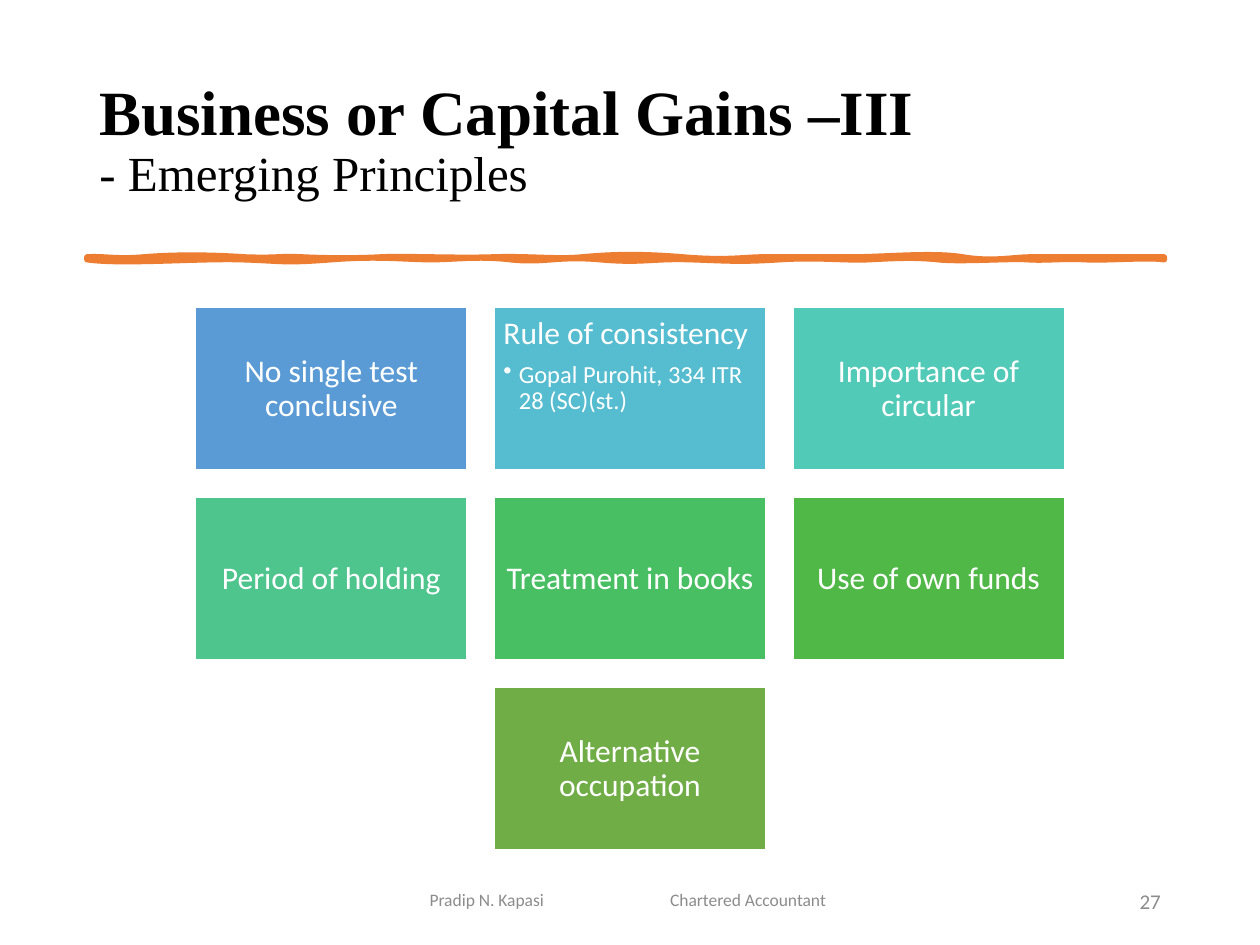
import pptx
import pptx.util
import pptx.dml.color
import pptx.enum.shapes
import pptx.enum.text
import pptx.oxml
import lxml.etree

Cm = pptx.util.Cm
Pt = pptx.util.Pt
RGB = pptx.dml.color.RGBColor
ALIGN = pptx.enum.text.PP_ALIGN
ANCHOR = pptx.enum.text.MSO_ANCHOR

BLACK = RGB(0x00, 0x00, 0x00)
WHITE = RGB(0xFF, 0xFF, 0xFF)
GREY = RGB(0x8C, 0x8C, 0x8C)
ORANGE = RGB(0xED, 0x7D, 0x31)
BLUE = RGB(0x5B, 0x9B, 0xD5)
CYAN = RGB(0x56, 0xBC, 0xD0)
TEAL = RGB(0x52, 0xCA, 0xB8)
MINT = RGB(0x4D, 0xC5, 0x8D)
JADE = RGB(0x49, 0xBF, 0x64)
LEAF = RGB(0x50, 0xB8, 0x46)
OLIVE = RGB(0x70, 0xAD, 0x47)

CARDS = [
    (0, 0, BLUE, "No single test conclusive", ""),
    (1, 0, CYAN, "Rule of consistency", "Gopal Purohit, 334 ITR 28 (SC)(st.)"),
    (2, 0, TEAL, "Importance of circular", ""),
    (0, 1, MINT, "Period of holding", ""),
    (1, 1, JADE, "Treatment in books", ""),
    (2, 1, LEAF, "Use of own funds", ""),
    (1, 2, OLIVE, "Alternative occupation", ""),
]

LEFT, TOP, BASE = 69, 204, 206
UPPER = [
    (82, 203, 92, 206, 114), (137, 202, 166, 202, 194),
    (222, 205, 220, 203, 240), (260, 205, 284, 205, 302),
    (320, 203, 362, 205, 391), (420, 203, 442, 206, 462),
    (483, 202, 506, 201, 542), (577, 207, 591, 204, 605),
    (618, 204, 650, 204, 676), (701, 204, 741, 200, 764),
    (788, 208, 804, 204, 818), (832, 204, 878, 204, 924),
]
LOWER = [
    (911, 204, 877, 207, 861), (845, 205, 829, 207, 815),
    (802, 205, 762, 208, 744), (726, 204, 709, 205, 690),
    (672, 207, 650, 204, 619), (588, 208, 578, 207, 548),
    (517, 205, 510, 209, 476), (442, 203, 432, 209, 405),
    (378, 203, 362, 206, 342), (322, 206, 301, 203, 263),
    (224, 209, 225, 207, 191), (157, 205, 96, 210, 69),
]


def add_tag(parent, tag, **attrs):
    """Append a drawing element to a parent element."""
    return lxml.etree.SubElement(parent, pptx.oxml.ns.qn(tag), attrs)


def add_run(para, text, size, color, font="Calibri", bold=False):
    """Append one formatted run to a paragraph."""
    run = para.add_run()
    run.text = text
    run.font.size = Pt(size)
    run.font.name = font
    run.font.bold = bold
    run.font.color.rgb = color


def set_title(slide):
    """Place the title and write its two lines."""
    title = slide.shapes.title
    title.left, title.top = Cm(1.75), Cm(1.02)
    title.width, title.height = Cm(21.89), Cm(3.68)
    frame = title.text_frame
    frame.vertical_anchor = ANCHOR.MIDDLE
    para = frame.paragraphs[0]
    para.alignment = ALIGN.LEFT
    para.line_spacing = 0.9
    add_run(para, "Business or Capital Gains –III", 36, BLACK,
            "Times New Roman", True)
    para.add_line_break()
    add_run(para, "- Emerging Principles", 28, BLACK, "Times New Roman")


def to_emu(num):
    """Turn hundredths of an inch into a length."""
    return Cm(num * 0.0254)


def bend(line, curve, base):
    """Replace a straight segment by a curve that ends on the base height."""
    ax, ay, bx, by, end = curve
    cubic = lxml.etree.Element(pptx.oxml.ns.qn("a:cubicBezTo"))
    for x, y in ((ax, ay), (bx, by), (end, base)):
        add_tag(cubic, "a:pt", x=str(to_emu(x - LEFT)), y=str(to_emu(y - TOP)))
    line.getparent().replace(line, cubic)


def add_stroke(slide):
    """Draw the wavy brush line below the title."""
    edges = [(curve, TOP) for curve in UPPER]
    edges += [(curve, BASE) for curve in LOWER]
    ends = [(to_emu(curve[-1]), to_emu(base)) for curve, base in edges]
    turn = len(UPPER)
    ends.insert(turn, (ends[turn - 1][0], to_emu(BASE)))
    pen = slide.shapes.build_freeform(to_emu(LEFT), to_emu(TOP))
    pen.add_line_segments(ends, close=True)
    stroke = pen.convert_to_shape()
    lines = list(stroke._element.iter(pptx.oxml.ns.qn("a:lnTo")))
    del lines[turn]
    for line, (curve, base) in zip(lines, edges):
        bend(line, curve, base)
    stroke.shadow.inherit = False
    stroke.fill.solid()
    stroke.fill.fore_color.rgb = ORANGE
    stroke.line.color.rgb = ORANGE
    stroke.line.width = Pt(3.25)
    add_tag(stroke.line._ln, "a:round")


def add_card(slide, col, row, color, head, note):
    """Add one card of the grid, with an optional bulleted note."""
    card = slide.shapes.add_shape(
        pptx.enum.shapes.MSO_SHAPE.RECTANGLE,
        Cm(3.94 + 6.02 * col), Cm(6.2 + 3.83 * row), Cm(5.48), Cm(3.28))
    card.shadow.inherit = False
    card.fill.solid()
    card.fill.fore_color.rgb = color
    card.line.color.rgb = WHITE
    card.line.width = Pt(1)
    frame = card.text_frame
    frame.word_wrap = True
    frame.margin_left = frame.margin_right = Cm(0.19)
    frame.margin_top = frame.margin_bottom = Cm(0.19)
    frame.vertical_anchor = ANCHOR.TOP if note else ANCHOR.MIDDLE
    para = frame.paragraphs[0]
    para.alignment = ALIGN.LEFT if note else ALIGN.CENTER
    para.line_spacing = 0.9
    add_run(para, head, 18, WHITE)
    if note:
        para.space_after = Pt(6.3)
        item = frame.add_paragraph()
        item.alignment = ALIGN.LEFT
        item.level = 1
        item.line_spacing = 0.9
        props = item._p.get_or_add_pPr()
        props.set("marL", str(Cm(0.31)))
        props.set("indent", str(-Cm(0.31)))
        add_tag(props, "a:buChar", char="•")
        add_run(item, note, 14, WHITE)


def add_foot(slide, left, width, text, size, align):
    """Add a footer text box and return its paragraph."""
    box = slide.shapes.add_textbox(Cm(left), Cm(17.65), Cm(width), Cm(1.02))
    frame = box.text_frame
    frame.word_wrap = True
    frame.vertical_anchor = ANCHOR.MIDDLE
    para = frame.paragraphs[0]
    para.alignment = align
    para.space_after = Pt(6)
    add_run(para, text, size, GREY)
    return para


def main():
    """Build the slide and save it."""
    deck = pptx.Presentation()
    deck.slide_width, deck.slide_height = Cm(25.4), Cm(19.05)
    slide = deck.slides.add_slide(deck.slide_layouts[5])
    set_title(slide)
    add_stroke(slide)
    names = add_foot(slide, 8.41, 8.59,
                     "Pradip N. Kapasi\tChartered Accountant", 10, ALIGN.LEFT)
    names.line_spacing = 0.9
    tabs = add_tag(names._p.get_or_add_pPr(), "a:tabLst")
    add_tag(tabs, "a:tab", pos=str(Cm(4.85)), algn="l")
    add_foot(slide, 17.93, 5.72, "27", 12, ALIGN.RIGHT)
    for card in CARDS:
        add_card(slide, *card)
    deck.save("out.pptx")


if __name__ == "__main__":
    main()
